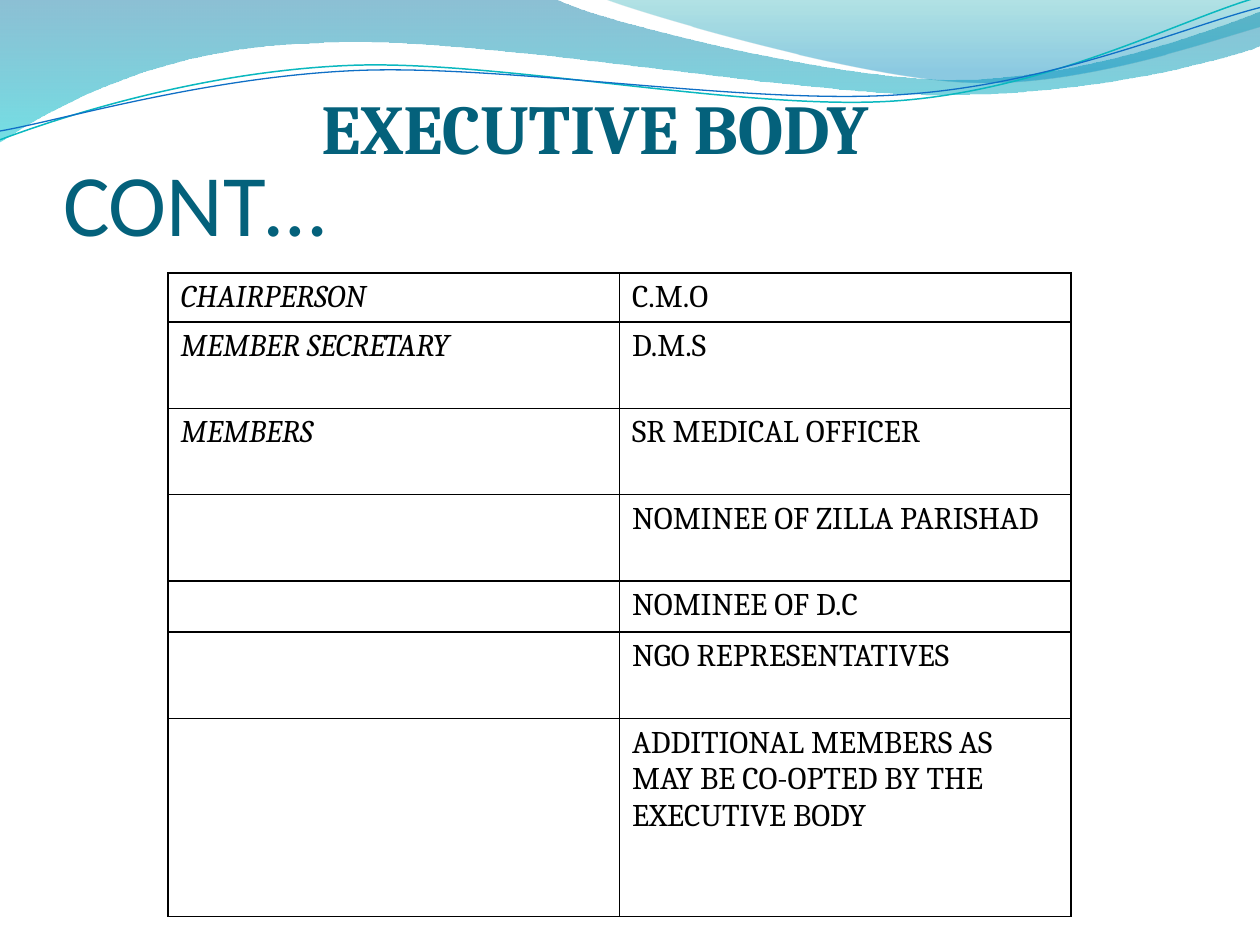
import dataclasses
import pptx
import pptx.util
import pptx.dml.color
import pptx.enum.text
import pptx.oxml
import pptx.oxml.ns
from lxml import etree


@dataclasses.dataclass(frozen=True)
class Theme:
    heading: str = "04617B"
    ink: str = "000000"
    teal_line: str = "0AB8BF"
    blue_line: str = "0F6FC6"
    band: tuple = ((0, "0074A1", 45), (1, "00C6CF", 55))
    corner: tuple = ((0, "00A1A9", 30), (0.8, "008BBF", 45))
    title_font: str = "Calibri"
    text_font: str = "Cambria"
    title_size: int = 50
    subtitle_size: int = 40
    table_size: int = 18


COLUMNS, ROWS = 100, 75

BAND = [(0, 0), (44, -0.1), (47.6, 1.7, 66.4, 6.3, 75.8, 6.3),
        (85.3, 6.3, 95.8, 2.6, 100, 0.9), (100.1, 3.6),
        (98.3, 4.4, 87, 7.6, 74.6, 7.5), (62.2, 7.5, 38.2, 2.8, 25.7, 3.4),
        (12.9, 3.6, 4.6, 8.3, -0.1, 11.3)]
CORNER = [(47.9, -0.1), (50.9, 1.1, 68.2, 6.2, 76.9, 6.5),
          (85.6, 6.9, 96.1, 3.2, 100, 2.1), (100, 0)]
TEAL_WAVE = [(0, 11.1), (4.8, 9.3, 15.8, 5.7, 27.7, 5.2),
             (39.5, 4.7, 59.3, 8.9, 71.3, 8), (83.3, 7.1, 93.8, 1.5, 99.8, -0.2)]
BLUE_WAVE = [(0, 10.4), (4.7, 9.6, 16.4, 6.1, 28.3, 5.6),
             (40.3, 5.1, 59.7, 8.4, 71.7, 7.5), (83.6, 6.7, 94.1, 2.1, 100, 0.6)]

MEMBERS = [("CHAIRPERSON", "C.M.O", 3.9),
           ("MEMBER SECRETARY", "D.M.S", 6.86),
           ("MEMBERS", "SR MEDICAL OFFICER", 6.86),
           ("", "NOMINEE OF ZILLA PARISHAD", 6.86),
           ("", "NOMINEE OF D.C", 4),
           ("", "NGO REPRESENTATIVES", 6.86),
           ("", "ADDITIONAL MEMBERS AS MAY BE CO-OPTED BY THE EXECUTIVE BODY", 15.7)]


def rgb(color):
    return pptx.dml.color.RGBColor.from_string(color)


class SlideBuilder:
    def __init__(self, presentation, theme):
        self.theme = theme
        self.slide = presentation.slides.add_slide(presentation.slide_layouts[1])
        self.column = presentation.slide_width / COLUMNS
        self.row = presentation.slide_height / ROWS

    def x(self, columns):
        return pptx.util.Emu(round(columns * self.column))

    def y(self, rows):
        return pptx.util.Emu(round(rows * self.row))

    def box(self, left, top, width, height):
        return self.x(left), self.y(top), self.x(width), self.y(height)

    def style(self, paragraph, size, font, color, bold=False, italic=False):
        for run in paragraph.runs:
            run.font.size = pptx.util.Pt(size)
            run.font.name = font
            run.font.color.rgb = rgb(color)
            run.font.bold = bold
            run.font.italic = italic

    def outline(self, steps, close):
        points = [(self.x(x), self.y(y)) for step in steps
                  for x, y in zip(step[::2], step[1::2])]
        builder = self.slide.shapes.build_freeform(*points[0])
        builder.add_line_segments(points[1:], close=close)
        shape = builder.convert_to_shape()
        shape.shadow.inherit = False
        segments = iter(list(shape._element.iter(pptx.oxml.ns.qn("a:lnTo"))))
        for step in steps[1:]:
            segment = next(segments)
            if len(step) == 6:
                curve = etree.Element(pptx.oxml.ns.qn("a:cubicBezTo"))
                segment.addprevious(curve)
                for part in (segment, next(segments), next(segments)):
                    curve.append(part[0])
                    part.getparent().remove(part)
        return shape

    def gradient_area(self, steps, stops):
        shape = self.outline(steps, True)
        shape.line.fill.background()
        shape.fill.gradient()
        shape.fill.gradient_angle = 270
        for stop, (position, color, opacity) in zip(shape.fill.gradient_stops, stops):
            stop.position = position
            stop.color.rgb = rgb(color)
        colors = shape._element.spPr.iter(pptx.oxml.ns.qn("a:srgbClr"))
        for element, (position, color, opacity) in zip(colors, stops):
            etree.SubElement(element, pptx.oxml.ns.qn("a:alpha"), val=str(opacity * 1000))

    def wave(self, steps, color, width):
        shape = self.outline(steps, False)
        shape.fill.background()
        shape.line.color.rgb = rgb(color)
        shape.line.width = pptx.util.Pt(width)

    def placeholder(self, index, text, box, margins, anchor, indent, **font):
        shape = self.slide.placeholders[index]
        shape._element.getparent().append(shape._element)
        shape.left, shape.top, shape.width, shape.height = self.box(*box)
        frame = shape.text_frame
        frame.text = text
        frame.word_wrap = True
        frame.auto_size = pptx.enum.text.MSO_AUTO_SIZE.NONE
        frame.vertical_anchor = anchor
        (frame.margin_left, frame.margin_top,
         frame.margin_right, frame.margin_bottom) = self.box(*margins)
        paragraph = frame.paragraphs[0]
        properties = paragraph._p.get_or_add_pPr()
        properties.set("marL", str(self.x(indent)))
        properties.set("indent", "0")
        etree.SubElement(properties, pptx.oxml.ns.qn("a:buNone"))
        paragraph.alignment = pptx.enum.text.PP_ALIGN.LEFT
        paragraph.space_before = pptx.util.Pt(0)
        self.style(paragraph, **font)

    def border(self, cell):
        properties = cell._tc.get_or_add_tcPr()
        for index, side in enumerate(("lnL", "lnR", "lnT", "lnB")):
            properties.insert(index, pptx.oxml.parse_xml(
                f'<a:{side} {pptx.oxml.ns.nsdecls("a")} w="{pptx.util.Pt(1)}"><a:solidFill>'
                f'<a:srgbClr val="{self.theme.ink}"/></a:solidFill></a:{side}>'))

    def table(self, entries, left, top, width):
        height = sum(entry[-1] for entry in entries)
        table = self.slide.shapes.add_table(
            len(entries), 2, *self.box(left, top, width, height)).table
        table.first_row = False
        table.horz_banding = False
        for row, (role, member, rows) in zip(table.rows, entries):
            row.height = self.y(rows)
            for cell, text, italic in zip(row.cells, (role, member), (True, False)):
                cell.fill.background()
                self.border(cell)
                cell.text_frame.text = text
                paragraph = cell.text_frame.paragraphs[0]
                paragraph.font.size = pptx.util.Pt(self.theme.table_size)
                self.style(paragraph, self.theme.table_size, self.theme.text_font,
                           self.theme.ink, italic=italic)


def main():
    presentation = pptx.Presentation()
    presentation.slide_width = pptx.util.Inches(10)
    presentation.slide_height = pptx.util.Inches(7.5)
    theme = Theme()
    builder = SlideBuilder(presentation, theme)
    builder.gradient_area(BAND, theme.band)
    builder.gradient_area(CORNER, theme.corner)
    builder.wave(TEAL_WAVE, theme.teal_line, 0.85)
    builder.wave(BLUE_WAVE, theme.blue_line, 0.75)
    anchors = pptx.enum.text.MSO_ANCHOR
    builder.placeholder(0, "CONT…", (5, 7.7, 90, 12.5), (0, 0.5, 0, 0), anchors.BOTTOM, 0,
                        size=theme.title_size, font=theme.title_font, color=theme.heading)
    builder.placeholder(1, "EXECUTIVE BODY", (5, 4.2, 90, 11.7), (0.5, 0, 0.5, 0),
                        anchors.MIDDLE, 20, size=theme.subtitle_size,
                        font=theme.text_font, color=theme.heading, bold=True)
    builder.table(MEMBERS, 13.33, 21.65, 71.67)
    presentation.save("out.pptx")


if __name__ == "__main__":
    main()
